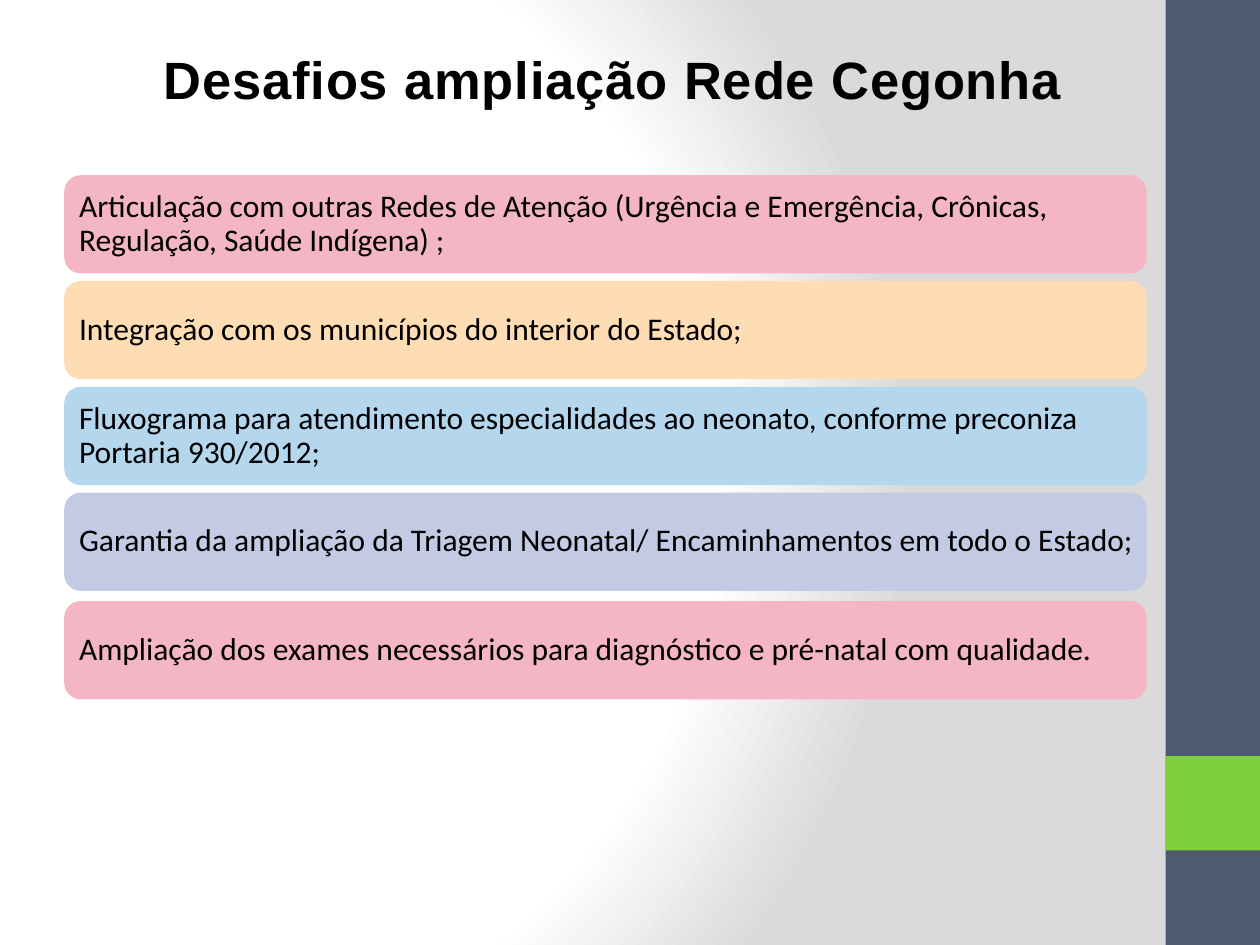
"""Build the slide on the challenges of expanding the Rede Cegonha network."""
from lxml import etree
from pptx import Presentation
from pptx.dml import color
from pptx.enum import shapes, text
from pptx.oxml import ns
from pptx.util import Inches, Pt

COLORS = {
    "black": "000000", "white": "FFFFFF", "gray": "DADADA", "slate": "4E5B6F",
    "green": "7FD13B", "pink": "F4B5C5", "peach": "FEDCB4", "blue": "B4D7ED",
    "lilac": "C3CAE3",
}
CHALLENGES = [
    (1.39, "pink", "Articulação com outras Redes de Atenção (Urgência e Emergência, "
                   "Crônicas, Regulação, Saúde Indígena) ;"),
    (2.23, "peach", "Integração com os municípios do interior do Estado;"),
    (3.07, "blue", "Fluxograma para atendimento especialidades ao neonato, conforme "
                   "preconiza Portaria 930/2012;"),
    (3.91, "lilac", "Garantia da ampliação da Triagem Neonatal/ Encaminhamentos em todo "
                    "o Estado;"),
    (4.77, "pink", "Ampliação dos exames necessários para diagnóstico e pré-natal com "
                   "qualidade."),
]


def add_block(s, kind, left, top, width, height, fill):
    sp = s.shapes.add_shape(kind, Inches(left), Inches(top), Inches(width), Inches(height))
    sp.shadow.inherit = False
    sp.fill.solid()
    sp.fill.fore_color.rgb = color.RGBColor.from_string(COLORS[fill])
    sp.line.fill.background()
    return sp


def set_text(tf, value, font, size, align):
    tf.text = value
    tf.word_wrap = True
    tf.vertical_anchor = text.MSO_ANCHOR.MIDDLE
    p = tf.paragraphs[0]
    p.alignment = align
    r = p.runs[0]
    r.font.name = font
    r.font.size = Pt(size)
    r.font.color.rgb = color.RGBColor.from_string(COLORS["black"])
    return p


prs = Presentation()
prs.slide_width, prs.slide_height = Inches(10), Inches(7.5)
s = prs.slides.add_slide(prs.slide_layouts[5])

s.background.fill.solid()
solid = s.element.find(".//" + ns.qn("p:bgPr") + "/" + ns.qn("a:solidFill"))
stops = "".join(
    f'<a:gs pos="{pos}"><a:srgbClr val="{COLORS[name]}"/></a:gs>'
    for pos, name in [(0, "white"), (75000, "white"), (100000, "gray")]
)
gradient = etree.fromstring(
    f'<a:gradFill {ns.nsdecls("a")} rotWithShape="1"><a:gsLst>{stops}</a:gsLst>'
    '<a:path path="circle"><a:fillToRect l="20000" t="50000" r="100000" b="50000"/>'
    "</a:path></a:gradFill>"
)
solid.getparent().replace(solid, gradient)

add_block(s, shapes.MSO_SHAPE.RECTANGLE, 9.25, 0, 0.75, 7.5, "slate")
add_block(s, shapes.MSO_SHAPE.RECTANGLE, 9.25, 6, 0.75, 0.75, "green")

title = s.shapes.title
title.left, title.top = Inches(0), Inches(0)
title.width, title.height = Inches(8.9), Inches(1.25)
title.text_frame.margin_left = Inches(0.93)
p = set_text(title.text_frame, "Desafios ampliação Rede Cegonha", "Arial", 30,
             text.PP_ALIGN.CENTER)
r = p.runs[0]
r.font.bold = True
r.font._element.set("spc", "50")

for top, fill, challenge in CHALLENGES:
    sp = add_block(s, shapes.MSO_SHAPE.ROUNDED_RECTANGLE, 0.51, top, 8.59, 0.78, fill)
    tf = sp.text_frame
    tf.margin_left, tf.margin_right = Inches(0.08), Inches(0.05)
    p = set_text(tf, challenge, "Calibri", 18, text.PP_ALIGN.LEFT)
    p.line_spacing = 0.9

prs.save("out.pptx")
